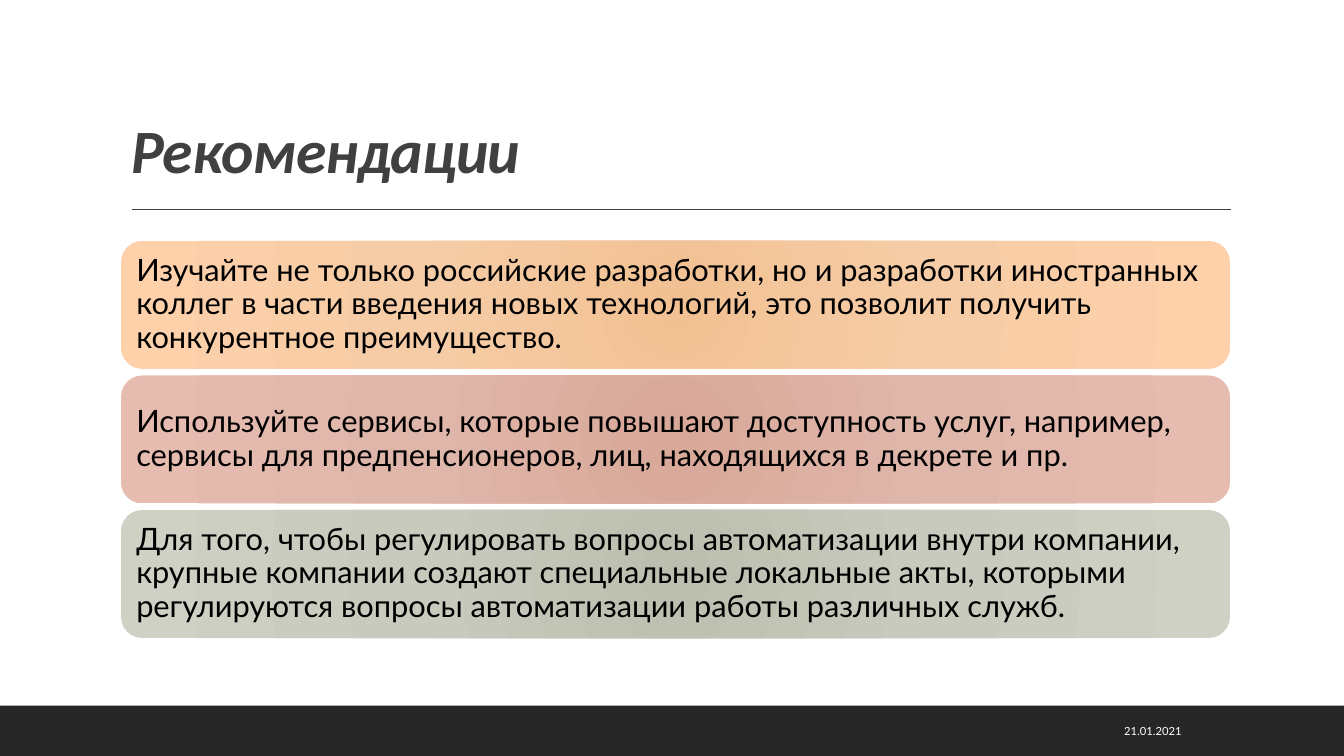
"""Build the recommendations slide: a title over three rounded gradient panels."""
from pptx import Presentation
from pptx.dml.color import RGBColor
from pptx.enum.shapes import MSO_CONNECTOR, MSO_SHAPE
from pptx.enum.text import MSO_ANCHOR, MSO_AUTO_SIZE, PP_ALIGN
from pptx.oxml import parse_xml
from pptx.oxml.ns import nsdecls, qn
from pptx.util import Inches, Pt

RECT, ROUNDED = MSO_SHAPE.RECTANGLE, MSO_SHAPE.ROUNDED_RECTANGLE
STRAIGHT = MSO_CONNECTOR.STRAIGHT
MIDDLE, BOTTOM = MSO_ANCHOR.MIDDLE, MSO_ANCHOR.BOTTOM
LEFT, RIGHT = PP_ALIGN.LEFT, PP_ALIGN.RIGHT
NO_FIT = MSO_AUTO_SIZE.NONE

MARGIN, CONTENT_WIDTH = Inches(1.2), Inches(11)
PANEL_TOP, PANEL_HEIGHT, PANEL_STEP = Inches(2.39), Inches(1.27), Inches(1.335)
FOOTER_HEIGHT = Inches(0.5)

RECOMMENDATIONS = [
    ("Изучайте не только российские разработки, но и разработки иностранных "
     "коллег в части введения новых технологий, это позволит получить "
     "конкурентное преимущество.", ("F1C193", "F6CCA6", "FED1AA")),
    ("Используйте сервисы, которые повышают доступность услуг, например, "
     "сервисы для предпенсионеров, лиц, находящихся в декрете и пр.",
     ("D8A899", "DFB6AA", "E7BCB0")),
    ("Для того, чтобы регулировать вопросы автоматизации внутри компании, "
     "крупные компании создают специальные локальные акты, которыми "
     "регулируются вопросы автоматизации работы различных служб.",
     ("BCBFAF", "C7CABC", "CED1C3")),
]


def rgb(value):
    return RGBColor.from_string(value)


def write(frame, text, font_name, size, color, anchor, align):
    frame.word_wrap = True
    frame.auto_size = NO_FIT
    frame.vertical_anchor = anchor
    paragraph = frame.paragraphs[0]
    paragraph.text = text
    paragraph.alignment = align
    paragraph.font.name = font_name
    paragraph.font.size = Pt(size)
    paragraph.font.color.rgb = rgb(color)
    return paragraph


deck = Presentation()
deck.slide_width, deck.slide_height = Inches(13.33), Inches(7.5)
slide = deck.slides.add_slide(deck.slide_layouts[5])
shapes = slide.shapes

footer = shapes.add_shape(RECT, 0, deck.slide_height - FOOTER_HEIGHT,
                          deck.slide_width, FOOTER_HEIGHT)
footer.shadow.inherit = False
footer.fill.solid()
footer.fill.fore_color.rgb = rgb("262626")
footer.line.fill.background()

title_rule = shapes.add_connector(STRAIGHT, Inches(1.31), Inches(2.08),
                                  Inches(12.21), Inches(2.08))
title_rule.line.color.rgb = rgb("404040")
title_rule.line.width = Pt(1)
title_rule.element.spPr.append(parse_xml(f"<a:effectLst {nsdecls('a')}/>"))

title = shapes.title
title.left, title.top = MARGIN, Inches(0.31)
title.width, title.height = CONTENT_WIDTH, Inches(1.59)
heading = write(title.text_frame, "Рекомендации", "Calibri", 44, "404040", BOTTOM, LEFT)
heading.line_spacing = 0.9
heading.font.bold = heading.font.italic = True
heading.runs[0].font.language_id = None
heading.runs[0].font._element.set("spc", "-50")

for row, (advice, tints) in enumerate(RECOMMENDATIONS):
    panel = shapes.add_shape(ROUNDED, MARGIN, PANEL_TOP + row * PANEL_STEP,
                             CONTENT_WIDTH, PANEL_HEIGHT)
    panel.shadow.inherit = False
    panel.line.fill.background()
    panel.fill.gradient()
    stops = "".join(f'<a:gs pos="{share * 1000}"><a:srgbClr val="{tint}"/></a:gs>'
                    for share, tint in zip((0, 45, 100), tints))
    glow = parse_xml(
        f'<a:gradFill {nsdecls("a")} rotWithShape="1"><a:gsLst>{stops}</a:gsLst>'
        '<a:path path="circle"><a:fillToRect l="100000" t="100000" r="100000" b="100000"/>'
        '</a:path></a:gradFill>')
    properties = panel.element.spPr
    properties.replace(properties.find(qn("a:gradFill")), glow)
    body = panel.text_frame
    body.margin_left = body.margin_right = Inches(0.09)
    body.margin_top = body.margin_bottom = Inches(0.09)
    write(body, advice, "Lato", 22, "000000", MIDDLE, LEFT).line_spacing = 0.9

date = shapes.add_textbox(Inches(8.99), Inches(7.05), Inches(2.83), Inches(0.4))
write(date.text_frame, "21.01.2021", "Lato", 8, "FFFFFF", MIDDLE, RIGHT)

deck.save("out.pptx")
